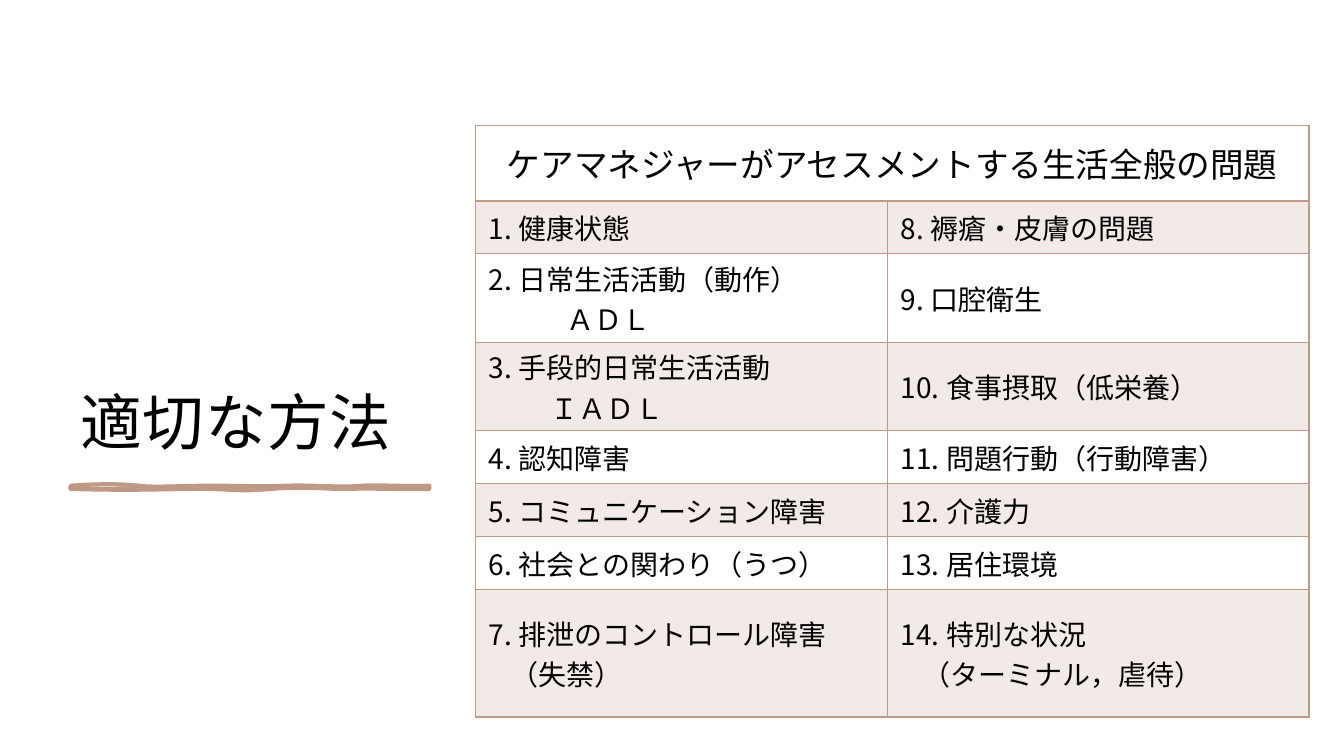
from dataclasses import dataclass

from lxml.etree import SubElement
from pptx import Presentation
from pptx.dml.color import RGBColor
from pptx.enum.shapes import MSO_SHAPE as Preset
from pptx.enum.text import MSO_ANCHOR as Anchor, PP_ALIGN as Align
from pptx.oxml import parse_xml
from pptx.oxml.ns import nsdecls, qn
from pptx.util import Pt


@dataclass(frozen=True)
class Theme:
    font: str = "Noto Sans CJK JP"
    text: RGBColor = RGBColor(0, 0, 0)
    accent: RGBColor = RGBColor(0xBE, 0x9A, 0x86)
    paper: RGBColor = RGBColor(255, 255, 255)
    title_size: int = 44
    header_size: int = 24
    body_size: int = 20


theme = Theme()


def add_run(paragraph, text, size):
    run = paragraph.add_run()
    run.text = text
    run.font.size = Pt(size)
    run.font.name = theme.font
    run.font.color.rgb = theme.text
    SubElement(run.font._element, qn("a:ea"), typeface=theme.font)
    return run


presentation = Presentation()
presentation.slide_width, presentation.slide_height = Pt(960), Pt(540)
slide = presentation.slides.add_slide(presentation.slide_layouts[6])

# Backdrop
backdrop = slide.shapes.add_shape(Preset.RECTANGLE, Pt(0), Pt(0), Pt(960), Pt(540))
backdrop.shadow.inherit = False
backdrop.fill.solid()
backdrop.fill.fore_color.rgb = theme.paper
backdrop.line.fill.background()

# Title
title = slide.shapes.add_textbox(Pt(50.4), Pt(50.4), Pt(281.5), Pt(281.5))
frame = title.text_frame
frame.word_wrap = True
frame.vertical_anchor = Anchor.BOTTOM
frame.margin_bottom = Pt(5)
run = add_run(frame.paragraphs[0], "適切な方法", theme.title_size)
run.font._element.set("spc", "50")

# Hand-drawn underline: cubic curves, each as two handles and an end point
left, top, right, bottom = 50.4, 347, 306.7, 349.2
outline_curves = [
    (69.8, 345.6, 87.1, 345.6, 99.4, 347),
    (111.6, 348.5, 127.4, 347, 150.5, 347),
    (173.5, 347, 187.2, 347.8, 204.5, 347),
    (221.8, 346.3, 244.1, 348.5, 258.5, 347),
    (272.9, 346.3, 296.6, 347.8, 306.7, 347),
    (306.7, 347.8, 306.7, 349.2, 306.7, 349.2),
    (293.8, 349.9, 262.1, 348.5, 250.6, 349.2),
    (239, 349.9, 218.9, 347, 194.4, 349.2),
    (169.2, 351.4, 166.3, 349.2, 143.3, 349.2),
    (119.5, 349.2, 95, 350.6, 50.4, 349.2),
    (50.4, 348.5, 50.4, 347.8, 50.4, 347),
]
body_curves = [
    (73.4, 348.5, 79.2, 347.8, 99.4, 347),
    (119.5, 346.3, 121.7, 345.6, 143.3, 347),
    (164.2, 348.5, 187.9, 347.8, 199.4, 347),
    (211, 346.3, 235.4, 349.2, 247.7, 347),
    (260.6, 345.6, 285.8, 349.9, 306.7, 347),
    (306.7, 348.5, 306.7, 348.5, 306.7, 349.2),
    (296.6, 349.2, 267.8, 351.4, 255.6, 349.2),
    (243.4, 347.8, 222.5, 349.2, 199.4, 349.2),
    (175.7, 349.2, 172.8, 348.5, 155.5, 349.2),
    (139, 349.9, 128.9, 348.5, 104.4, 349.2),
    (79.9, 349.9, 66.2, 349.2, 50.4, 349.2),
    (50.4, 348.5, 50.4, 348.5, 50.4, 347),
]
builder = slide.shapes.build_freeform(Pt(left), Pt(top))
builder.add_line_segments([(Pt(right), Pt(top)), (Pt(right), Pt(bottom)),
                           (Pt(left), Pt(bottom))], close=True)
underline = builder.convert_to_shape()
underline.shadow.inherit = False
underline.fill.solid()
underline.fill.fore_color.rgb = theme.accent
underline.line.color.rgb = theme.accent
underline.line.width = Pt(3)

# Bend the underline: one path is only stroked, the other only filled
path_list = underline._element.find(".//" + qn("a:pathLst"))
path_list.remove(path_list[0])
for curves, hidden_part in ((outline_curves, "fill"), (body_curves, "stroke")):
    path = SubElement(path_list, qn("a:path"), w=str(Pt(right - left)),
                      h=str(Pt(bottom - top)))
    path.set(hidden_part, "none" if hidden_part == "fill" else "0")
    start = SubElement(path, qn("a:moveTo"))
    SubElement(start, qn("a:pt"), x="0", y="0")
    for curve in curves:
        bend = SubElement(path, qn("a:cubicBezTo"))
        for x, y in zip(curve[::2], curve[1::2]):
            SubElement(bend, qn("a:pt"), x=str(Pt(x - left)), y=str(Pt(y - top)))
    SubElement(path, qn("a:close"))

# Table content: each cell is a list of (text, indent in points)
header = "ケアマネジャーがアセスメントする生活全般の問題"
problems = [
    ([("1. 健康状態", 0)], [("8. 褥瘡・皮膚の問題", 0)]),
    ([("2. 日常生活活動（動作）", 0), ("ＡＤＬ", 55.5)], [("9. 口腔衛生", 0)]),
    ([("3. 手段的日常生活活動", 0), ("ＩＡＤＬ", 44.5)], [("10. 食事摂取（低栄養）", 0)]),
    ([("4. 認知障害", 0)], [("11. 問題行動（行動障害）", 0)]),
    ([("5. コミュニケーション障害", 0)], [("12. 介護力", 0)]),
    ([("6. 社会との関わり（うつ）", 0)], [("13. 居住環境", 0)]),
    ([("7. 排泄のコントロール障害", 0), ("（失禁）", 15.5)],
     [("14. 特別な状況", 0), ("（ターミナル，虐待）", 15.5)]),
]
rows = [([(header, 0)], [])] + problems
column_widths = [294.5, 301]
row_heights = [54, 37.8, 63.2, 63.2, 37.8, 37.8, 37.8, 91.2]

# Table
table = slide.shapes.add_table(len(rows), 2, Pt(339.5), Pt(89.5),
                               Pt(sum(column_widths)), Pt(sum(row_heights))).table
table.first_row = table.horz_banding = False
for column, width in zip(table.columns, column_widths):
    column.width = Pt(width)
for row, height in zip(table.rows, row_heights):
    row.height = Pt(height)
table.cell(0, 0).merge(table.cell(0, 1))

for row_index, row in enumerate(rows):
    is_header = row_index == 0
    for column_index, lines in enumerate(row):
        cell = table.cell(row_index, column_index)
        cell.vertical_anchor = Anchor.MIDDLE
        cell.margin_left = Pt(5 if is_header else 9.5)
        cell.margin_right = Pt(5)
        cell.margin_top = cell.margin_bottom = Pt(2.7)
        properties = cell._tc.get_or_add_tcPr()

        # Every second row has a translucent tint
        if row_index % 2:
            cell.fill.solid()
            cell.fill.fore_color.rgb = theme.accent
            tint = properties.find(".//" + qn("a:srgbClr"))
            SubElement(tint, qn("a:alpha"), val="20000")
        else:
            cell.fill.background()

        # Borders, with a heavier rule under the header
        for position, side in enumerate(("lnL", "lnR", "lnT", "lnB")):
            heavy = (row_index, side) in ((0, "lnB"), (1, "lnT"))
            border = parse_xml(
                f'<a:{side} {nsdecls("a")} w="{Pt(2 if heavy else 1)}"><a:solidFill>'
                f'<a:srgbClr val="{theme.accent}"/></a:solidFill></a:{side}>')
            properties.insert(position, border)

        # Text
        for line_index, (text, indent) in enumerate(lines):
            frame = cell.text_frame
            paragraph = frame.add_paragraph() if line_index else frame.paragraphs[0]
            paragraph.alignment = Align.CENTER if is_header else Align.LEFT
            if indent:
                paragraph._p.get_or_add_pPr().set("marL", str(Pt(indent)))
            add_run(paragraph, text, theme.header_size if is_header else theme.body_size)

presentation.save("out.pptx")
